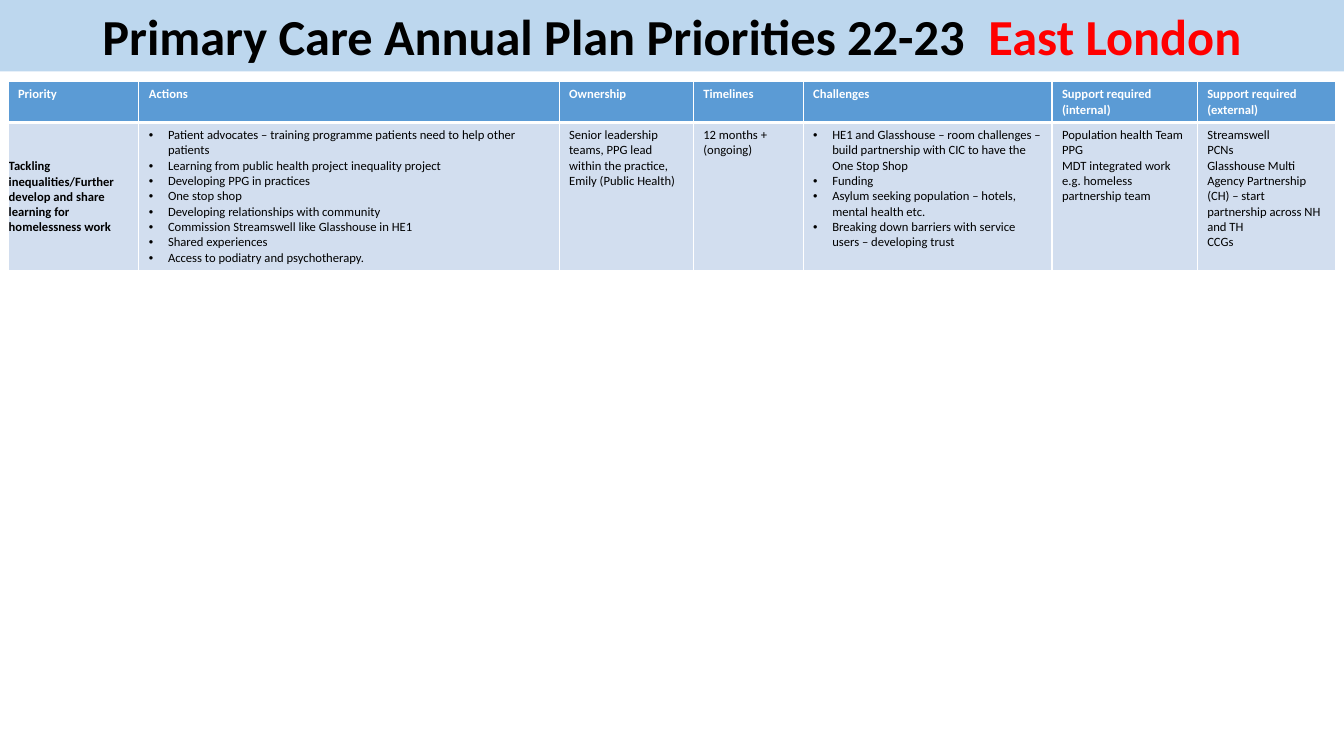
from lxml import etree
from pptx import Presentation
from pptx.dml.color import RGBColor
from pptx.enum.shapes import MSO_SHAPE
from pptx.enum.text import MSO_ANCHOR, PP_ALIGN
from pptx.oxml.ns import qn
from pptx.util import Cm, Pt

RECT = MSO_SHAPE.RECTANGLE
MIDDLE = MSO_ANCHOR.MIDDLE
CENTER = PP_ALIGN.CENTER
HUES = {"white": "FFFFFF", "black": "000000", "red": "FF0000",
        "band": "BDD7EE", "head": "5B9BD5", "body": "D2DEEF"}
WIDTHS = [3.3, 10.59, 3.38, 2.77, 6.27, 3.66, 3.5]
HEADS = ["Priority", "Actions", "Ownership", "Timelines", "Challenges",
         "Support required (internal)", "Support required (external)"]
BODY = [
    ["Tackling inequalities/Further develop and share learning for homelessness work"],
    ["Patient advocates – training programme patients need to help other patients",
     "Learning from public health project inequality project",
     "Developing PPG in practices",
     "One stop shop",
     "Developing relationships with community",
     "Commission Streamswell like Glasshouse in HE1",
     "Shared experiences",
     "Access to podiatry and psychotherapy."],
    ["Senior leadership teams, PPG lead within the practice, Emily (Public Health)"],
    ["12 months + (ongoing)"],
    ["HE1 and Glasshouse – room challenges – build partnership with CIC to have the One Stop Shop",
     "Funding",
     "Asylum seeking population – hotels, mental health etc.",
     "Breaking down barriers with service users – developing trust"],
    ["Population health Team", "PPG",
     "MDT integrated work e.g. homeless partnership team"],
    ["Streamswell", "PCNs",
     "Glasshouse Multi Agency Partnership (CH) – start partnership across NH and TH",
     "CCGs"],
]
LISTS = ("Actions", "Challenges")


class Plan:
    """Draws the elements of the plan slide in one style."""

    def __init__(self, deck):
        self.font = "Calibri"
        self.slide = deck.slides.add_slide(deck.slide_layouts[6])

    def hue(self, name):
        return RGBColor.from_string(HUES[name])

    def paint(self, item, name):
        item.fill.solid()
        item.fill.fore_color.rgb = self.hue(name)

    def run(self, para, text, size, hue, bold):
        run = para.add_run()
        run.text = text
        font = run.font
        font.name, font.size, font.bold = self.font, Pt(size), bold
        font.color.rgb = self.hue(hue)

    def bullet(self, para):
        props = para._p.get_or_add_pPr()
        props.set("marL", str(Cm(0.48)))
        props.set("indent", str(-Cm(0.48)))
        etree.SubElement(props, qn("a:buFont")).set("typeface", "Arial")
        etree.SubElement(props, qn("a:buChar")).set("char", "•")

    def edges(self, cell, base):
        props = cell._tc.get_or_add_tcPr()
        for side, width in zip("LRTB", (1, 1, 1, base)):
            line = etree.SubElement(props, qn(f"a:ln{side}"), w=str(Pt(width)))
            fill = etree.SubElement(line, qn("a:solidFill"))
            etree.SubElement(fill, qn("a:srgbClr"), val=HUES["white"])

    def cell(self, cell, lines, fill, hue, bold=False, dots=False, base=1):
        self.edges(cell, base)
        self.paint(cell, fill)
        frame = cell.text_frame
        for i, text in enumerate(lines):
            para = frame.add_paragraph() if i else frame.paragraphs[0]
            if dots:
                self.bullet(para)
            self.run(para, text, 9, hue, bold)

    def banner(self, parts):
        box = self.slide.shapes.add_shape(RECT, 0, 0, Cm(33.87), Cm(1.8))
        box.shadow.inherit = False
        self.paint(box, "band")
        box.line.fill.background()
        frame = box.text_frame
        frame.word_wrap = True
        frame.vertical_anchor = MIDDLE
        para = frame.paragraphs[0]
        para.alignment = CENTER
        for text, hue in parts:
            self.run(para, text, 36, hue, True)

    def table(self):
        grid = self.slide.shapes.add_table(
            2, len(HEADS), Cm(0.2), Cm(2.06), Cm(sum(WIDTHS)), Cm(4.7)).table
        for row, height in zip(grid.rows, (1.03, 3.7)):
            row.height = Cm(height)
        for i, (head, lines, width) in enumerate(zip(HEADS, BODY, WIDTHS)):
            grid.columns[i].width = Cm(width)
            self.cell(grid.cell(0, i), [head], "head", "white", bold=True, base=3)
            self.cell(grid.cell(1, i), lines, "body", "black",
                      bold=i == 0, dots=head in LISTS)
        first = grid.cell(1, 0)
        first.vertical_anchor = MIDDLE
        first.margin_left = first.margin_right = first.margin_top = Cm(0.02)
        first.margin_bottom = 0


def main():
    deck = Presentation()
    deck.slide_width, deck.slide_height = Cm(33.87), Cm(19.05)
    plan = Plan(deck)
    plan.table()
    plan.banner([("Primary Care Annual Plan Priorities 22-23  ", "black"),
                 ("East London", "red")])
    deck.save("out.pptx")


if __name__ == "__main__":
    main()
